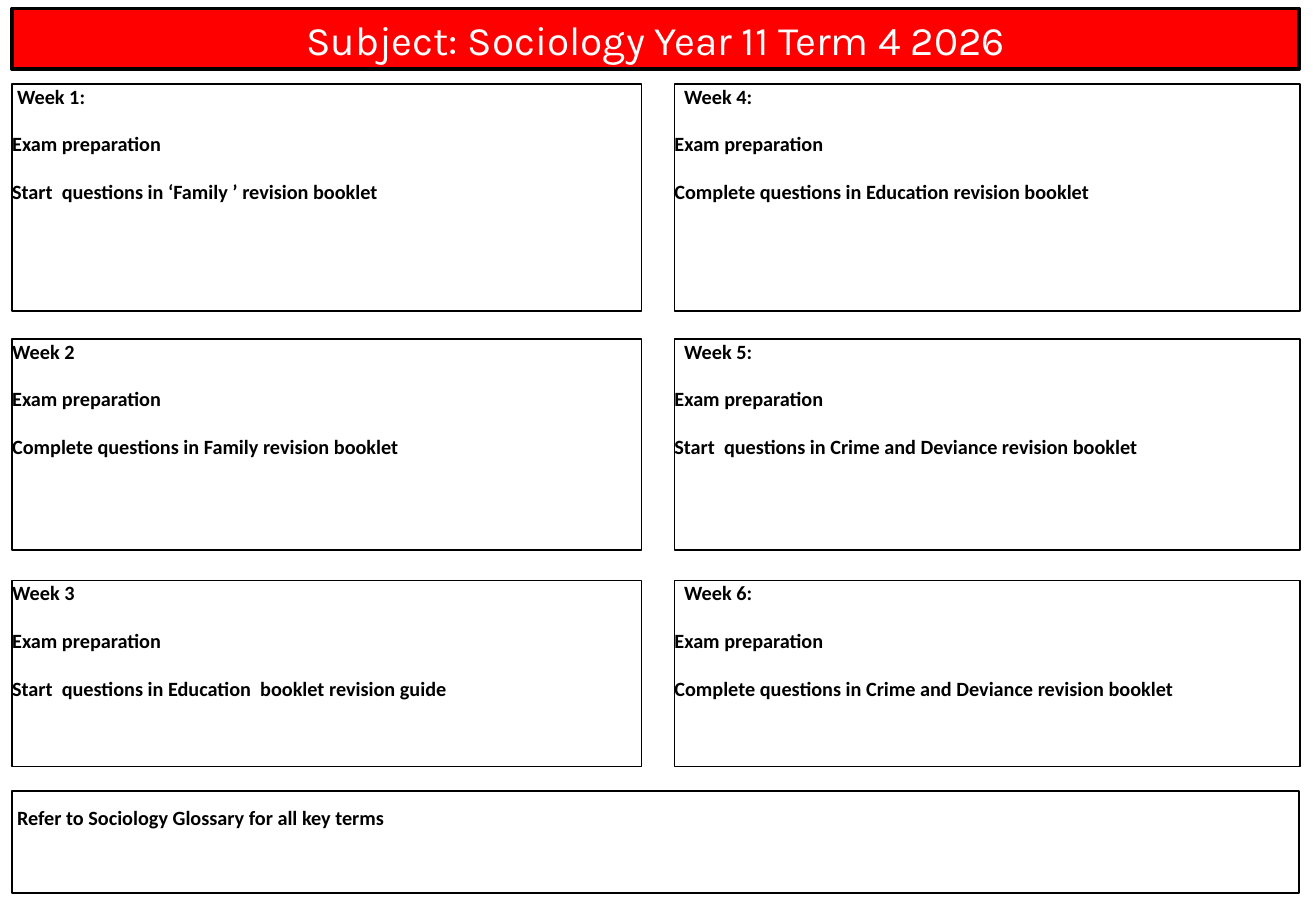
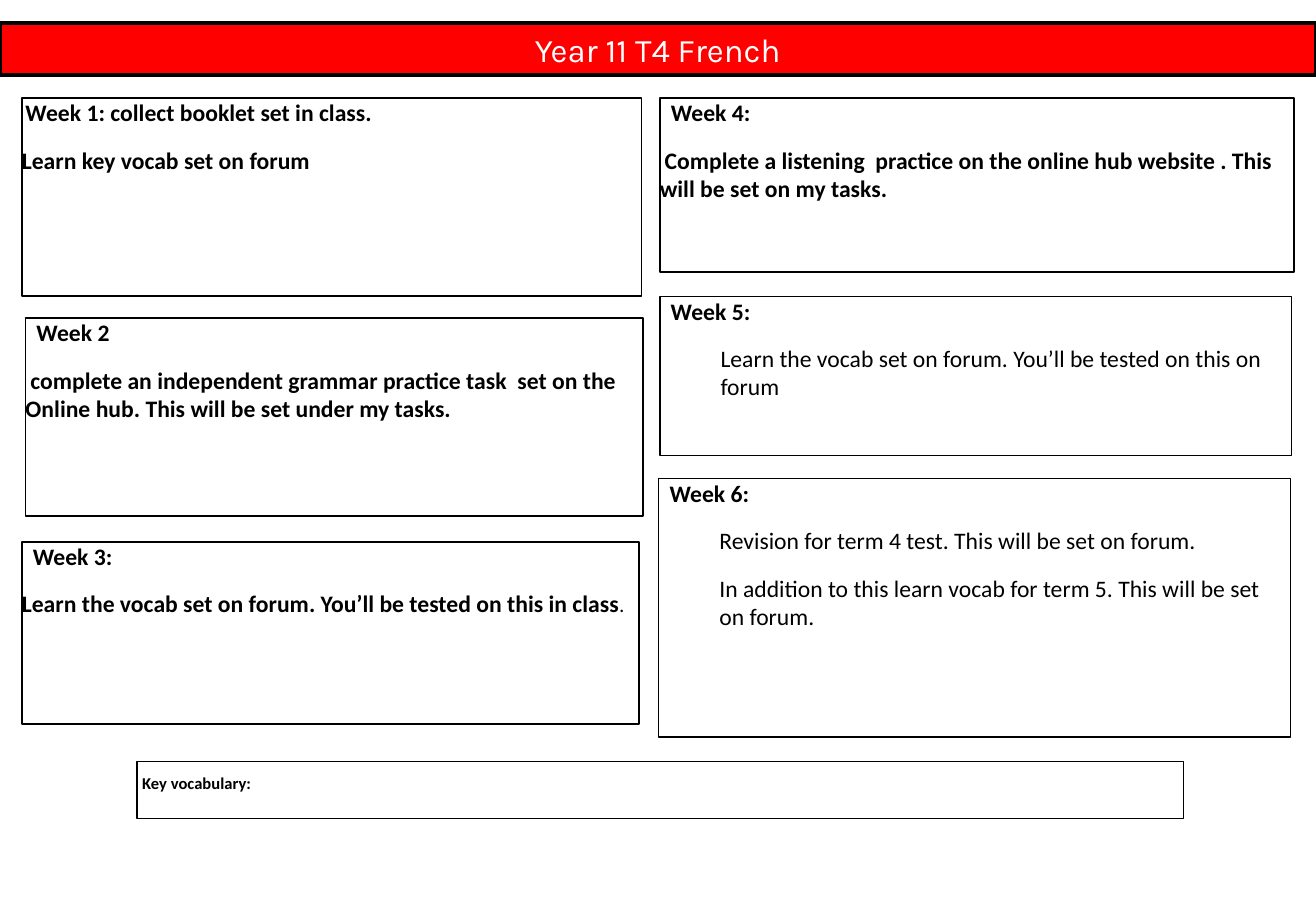
from dataclasses import dataclass
from itertools import product

from pptx import Presentation
from pptx.dml.color import RGBColor
from pptx.enum.shapes import MSO_SHAPE
from pptx.enum.text import MSO_ANCHOR, MSO_AUTO_SIZE, PP_ALIGN
from pptx.util import Inches, Pt


@dataclass(frozen=True)
class Theme:
    band: RGBColor = RGBColor(0xFF, 0x00, 0x00)
    ink: RGBColor = RGBColor(0x00, 0x00, 0x00)
    paper: RGBColor = RGBColor(0xFF, 0xFF, 0xFF)
    title_font: str = "Karla"
    body_font: str = "Calibri"
    band_line: float = 2.25
    box_line: float = 1


@dataclass(frozen=True)
class Sizes:
    title: float
    body: float
    gap: float        # space between paragraphs
    note: float
    note_line: float  # exact line height, also the space above the note


@dataclass(frozen=True)
class Para:
    text: str
    bold: bool = True
    left: float = 0
    first: float = 0
    tail: str = ""    # small closing run


THEME = Theme()
SOCIOLOGY = Sizes(title=24, body=12, gap=13.9, note=12, note_line=11.5)
FRENCH = Sizes(title=19.5, body=14, gap=11.3, note=9.8, note_line=9.3)


def add_run(p, text, size, font, color, bold=False):
    r = p.add_run()
    r.text = text
    r.font.size = Pt(size)
    r.font.name = font
    r.font.bold = bold
    r.font.color.rgb = color


def set_indent(p, left, first):
    pPr = p._p.get_or_add_pPr()
    pPr.set("marL", str(Inches(left)))
    pPr.set("indent", str(Inches(first)))


def add_title(slide, box, text, sizes):
    sp = slide.shapes.title
    sp.left, sp.top, sp.width, sp.height = map(Inches, box)
    sp.fill.solid()
    sp.fill.fore_color.rgb = THEME.band
    sp.line.color.rgb = THEME.ink
    sp.line.width = Pt(THEME.band_line)
    tf = sp.text_frame
    tf.auto_size = MSO_AUTO_SIZE.NONE
    tf.vertical_anchor = MSO_ANCHOR.TOP
    p = tf.paragraphs[0]
    p.alignment = PP_ALIGN.CENTER
    add_run(p, text, sizes.title, THEME.title_font, THEME.paper)


def add_box(slide, box):
    """Outlined box without margins; returns its text frame."""
    sp = slide.shapes.add_shape(MSO_SHAPE.RECTANGLE, *map(Inches, box))
    sp.shadow.inherit = False
    sp.fill.background()
    sp.line.color.rgb = THEME.ink
    sp.line.width = Pt(THEME.box_line)
    tf = sp.text_frame
    tf.word_wrap = True
    tf.vertical_anchor = MSO_ANCHOR.TOP
    tf.margin_left = tf.margin_right = tf.margin_top = tf.margin_bottom = 0
    return tf


def add_week(slide, box, paras, sizes):
    tf = add_box(slide, box)
    for i, para in enumerate(paras):
        p = tf.add_paragraph() if i else tf.paragraphs[0]
        p.alignment = PP_ALIGN.LEFT
        if i:
            p.space_before = Pt(sizes.gap)
        set_indent(p, para.left, para.first)
        add_run(p, para.text, sizes.body, THEME.body_font, THEME.ink, para.bold)
        if para.tail:
            add_run(p, para.tail, sizes.note, THEME.body_font, THEME.ink, para.bold)


def add_note(slide, box, text, sizes):
    tf = add_box(slide, box)
    tf.margin_top = Pt(sizes.note_line)
    p = tf.paragraphs[0]
    p.alignment = PP_ALIGN.LEFT
    p.line_spacing = Pt(sizes.note_line)
    set_indent(p, 0, 0.04)
    add_run(p, text, sizes.note, THEME.body_font, THEME.ink, bold=True)


def add_plan(prs, sizes, title, weeks, note):
    """One term plan; title and note are (box, text), weeks (box, paragraphs)."""
    slide = prs.slides.add_slide(prs.slide_layouts[5])
    add_title(slide, *title, sizes)
    for box, paras in weeks:
        add_week(slide, box, paras, sizes)
    add_note(slide, *note, sizes)


def sociology_weeks():
    columns = [(0.1, 5.18), (5.55, 5.15)]
    rows = [(0.69, 1.87), (2.79, 1.74), (4.78, 1.53)]
    plan = [
        ("Week 1:", 0.04, "Start  questions in ‘Family ’ revision booklet"),
        ("Week 2", 0, "Complete questions in Family revision booklet"),
        ("Week 3", 0, "Start  questions in Education  booklet revision guide"),
        ("Week 4:", 0.08, "Complete questions in Education revision booklet"),
        ("Week 5:", 0.08, "Start  questions in Crime and Deviance revision booklet"),
        ("Week 6:", 0.08, "Complete questions in Crime and Deviance revision booklet"),
    ]
    return [
        ((x, y, w, h), [Para(head, first=first), Para("Exam preparation"), Para(task)])
        for ((x, w), (y, h)), (head, first, task) in zip(product(columns, rows), plan)
    ]


def french_weeks():
    def heading(number, mark=":"):
        return Para(f"Week {number}{mark}", first=0.09)

    def detail(text):
        return Para(text, bold=False, left=0.5)

    return [
        ((0.18, 0.81, 5.1, 1.63), [
            Para("Week 1: collect booklet set in class.", first=0.03),
            Para("Learn key vocab set on forum")]),
        ((0.21, 2.62, 5.08, 1.63), [
            heading(2, ""),
            Para("complete an independent grammar practice task  set on the "
                 "Online hub. This will be set under my tasks.", first=0.04)]),
        ((0.18, 4.46, 5.08, 1.5), [
            heading(3),
            Para("Learn the vocab set on forum. You’ll be tested on this in class",
                 tail=".")]),
        ((5.43, 0.81, 5.22, 1.43), [
            heading(4),
            Para("Complete a listening  practice on the online hub website . "
                 "This will be set on my tasks.", first=0.04)]),
        ((5.43, 2.44, 5.2, 1.31), [
            heading(5),
            detail("Learn the vocab set on forum. You’ll be tested on this on forum")]),
        ((5.42, 3.94, 5.2, 2.13), [
            heading(6),
            detail("Revision for term 4 test. This will be set on forum."),
            detail("In addition to this learn vocab for term 5. "
                   "This will be set on forum.")]),
    ]


def main():
    prs = Presentation()
    prs.slide_width, prs.slide_height = Inches(10.83), Inches(7.5)

    # Sociology term plan
    add_plan(prs, SOCIOLOGY,
             ((0.1, 0.07, 10.59, 0.5), "Subject: Sociology Year 11 Term 4 2026"),
             sociology_weeks(),
             ((0.1, 6.51, 10.59, 0.84), "Refer to Sociology Glossary for all key terms"))

    # French term plan
    add_plan(prs, FRENCH,
             ((0, 0.19, 10.83, 0.43), "Year 11 T4 French"),
             french_weeks(),
             ((1.13, 6.27, 8.61, 0.47), "Key vocabulary:"))

    prs.save("out.pptx")


if __name__ == "__main__":
    main()
